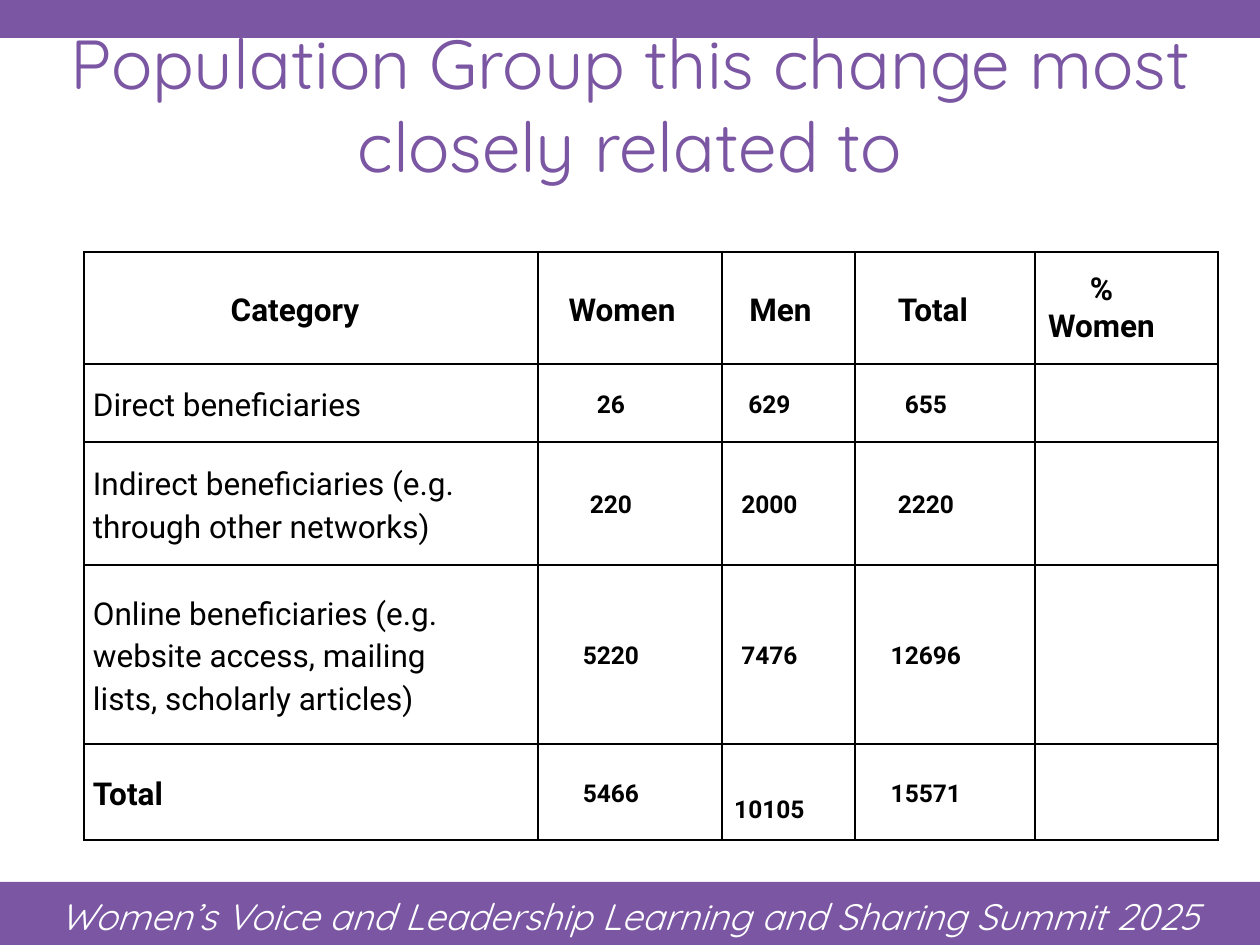
"""Build the summit slide that tabulates beneficiaries by category and gender."""
import pptx
import pptx.dml.color
import pptx.enum.shapes
import pptx.enum.text
import pptx.oxml
import pptx.oxml.ns
import pptx.util

PX = 914400 / 126
PURPLE, WHITE, BLACK = "7B56A3", "FFFFFF", "000000"
ALIGN = pptx.enum.text.PP_ALIGN
MIDDLE = pptx.enum.text.MSO_ANCHOR.MIDDLE


def color(value):
    return pptx.dml.color.RGBColor.from_string(value)


def write(frame, text, size=18, font="Roboto", fill=BLACK, bold=False,
          italic=False, align=ALIGN.CENTER, spacing=None):
    frame.word_wrap = True
    for index, line in enumerate(text.split("\n")):
        paragraph = frame.add_paragraph() if index else frame.paragraphs[0]
        paragraph.alignment = align
        if spacing:
            paragraph.line_spacing = spacing
        run = paragraph.add_run()
        run.text = line
        run.font.size = pptx.util.Pt(size)
        run.font.name = font
        run.font.bold = bold
        run.font.italic = italic
        run.font.color.rgb = color(fill)


presentation = pptx.Presentation()
presentation.slide_width = int(1260 * PX)
presentation.slide_height = int(945 * PX)
slide = presentation.slides.add_slide(presentation.slide_layouts[6])

for top, height in ((882, 63), (0, 38)):
    bar = slide.shapes.add_shape(pptx.enum.shapes.MSO_SHAPE.RECTANGLE,
                                 0, int(top * PX), int(1260 * PX), int(height * PX))
    bar.shadow.inherit = False
    bar.fill.solid()
    bar.fill.fore_color.rgb = color(PURPLE)
    bar.line.fill.background()

footer = slide.shapes.add_textbox(*(int(v * PX) for v in (21, 885, 1217, 60)))
write(footer.text_frame, "Women’s Voice and Leadership Learning and Sharing Summit 2025",
      size=21, font="Quicksand", fill=WHITE, italic=True, spacing=1.07)

title = slide.shapes.add_textbox(*(int(v * PX) for v in (0, 45, 1260, 116)))
title.text_frame.vertical_anchor = MIDDLE
write(title.text_frame, "Population Group this change most closely related to",
      size=39.6, font="Quicksand", fill=PURPLE)

widths = [454, 184, 133, 180, 183]
heights = [112, 78, 123, 179, 96]
header_insets = [41, 25, 25, 33, 41]
rows = [
    ["Category", "Women", "Men", "Total", "%\nWomen"],
    ["Direct beneficiaries", "26", "629", "655", ""],
    ["Indirect beneficiaries (e.g. through other networks)", "220", "2000", "2220", ""],
    ["Online beneficiaries (e.g. website access, mailing lists, scholarly articles)",
     "5220", "7476", "12696", ""],
    ["Total", "5466", "10105", "15571", ""],
]
table = slide.shapes.add_table(
    len(rows), len(widths), int(84 * PX), int(252 * PX),
    int(sum(widths) * PX), int(sum(heights) * PX)).table
for column, width in zip(table.columns, widths):
    column.width = int(width * PX)
for row, height in zip(table.rows, heights):
    row.height = int(height * PX)

namespace = pptx.oxml.ns.nsdecls("a")
for row_index, values in enumerate(rows):
    for column_index, value in enumerate(values):
        header, label = row_index == 0, column_index == 0
        cell = table.cell(row_index, column_index)
        cell.vertical_anchor = MIDDLE
        cell.margin_left = int(9 * PX)
        cell.margin_right = int((header_insets[column_index] if header else 47) * PX)
        cell.margin_top = int((32 if value == "10105" else 0) * PX)
        cell.margin_bottom = 0
        if value:
            write(cell.text_frame, value, size=18 if header or label else 14,
                  bold=header or not label or value == "Total",
                  align=ALIGN.LEFT if label and not header else ALIGN.CENTER,
                  spacing=None if "%" in value else 1.15)
        properties = cell._tc.get_or_add_tcPr()
        for side in ("lnL", "lnR", "lnT", "lnB"):
            properties.append(pptx.oxml.parse_xml(
                f'<a:{side} {namespace} w="12700"><a:solidFill>'
                f'<a:srgbClr val="{BLACK}"/></a:solidFill></a:{side}>'))
        cell.fill.solid()
        cell.fill.fore_color.rgb = color(WHITE)

percent = table.cell(0, 4).text_frame.paragraphs[0]
percent._p.get_or_add_pPr().set("marR", str(int(18 * PX)))

presentation.save("out.pptx")
